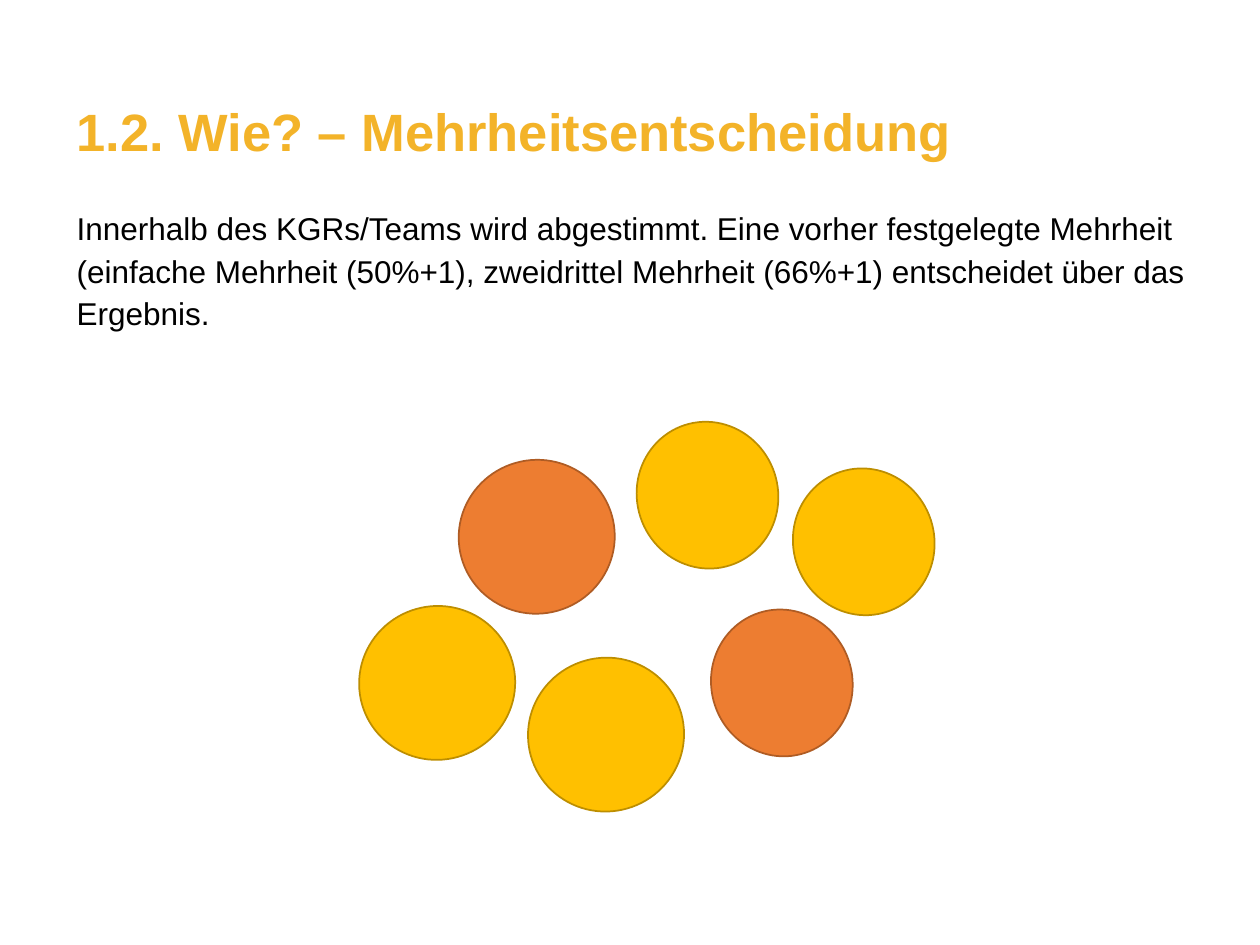
from pptx import Presentation
from pptx.dml.color import RGBColor
from pptx.enum.shapes import MSO_SHAPE
from pptx.enum.text import MSO_ANCHOR
from pptx.util import Inches, Pt

deck = Presentation()
deck.slide_width, deck.slide_height = Inches(10), Inches(7.5)
slide = deck.slides.add_slide(deck.slide_layouts[6])
unit = deck.slide_width / 100  # one percent of the slide's width


def grid(*cells):
    return [round(cell * unit) for cell in cells]


def paint(color, hue):
    color.rgb = RGBColor.from_string(hue)


# Title and body: top, height, line spacing, size, bold, colour, wording
texts = [
    (7.9, 7.9, 0.9, 30, True, "F3B329", "1.2. Wie? – Mehrheitsentscheidung"),
    (15.7, 56, Pt(24.4), 18, False, "000000",
     "Innerhalb des KGRs/Teams wird abgestimmt. Eine vorher festgelegte "
     "Mehrheit (einfache Mehrheit (50%+1), zweidrittel Mehrheit (66%+1) "
     "entscheidet über das Ergebnis."),
]
for top, height, gap, size, bold, hue, words in texts:
    frame = slide.shapes.add_textbox(*grid(5.1, top, 90.6, height)).text_frame
    frame.word_wrap = True
    frame.vertical_anchor = MSO_ANCHOR.TOP
    para = frame.paragraphs[0]
    para.line_spacing = gap
    run = para.add_run()
    run.text = words
    run.font.name, run.font.size, run.font.bold = "Arial", Pt(size), bold
    paint(run.font.color, hue)

# Voters: yellow is the majority, orange the minority (fill, line)
yellow, orange = ("FFC000", "BD8E00"), ("ED7D31", "AF5C24")
small, large = (11.7, 11.2, 71.9), (12.2, 12.4, 254.2)  # width, height, turn
voters = [
    (62.7, 37.4, small, yellow),
    (50.3, 33.7, small, yellow),
    (56.2, 48.6, small, orange),
    (28.6, 48, large, yellow),
    (42, 52.1, large, yellow),
    (36.5, 36.4, large, orange),
]
for left, top, (width, height, turn), (fill, line) in voters:
    voter = slide.shapes.add_shape(
        MSO_SHAPE.OVAL, *grid(left, top, width, height))
    voter.rotation = turn
    voter.shadow.inherit = False
    voter.fill.solid()
    paint(voter.fill.fore_color, fill)
    paint(voter.line.color, line)
    voter.line.width = Pt(1)

deck.save("out.pptx")
